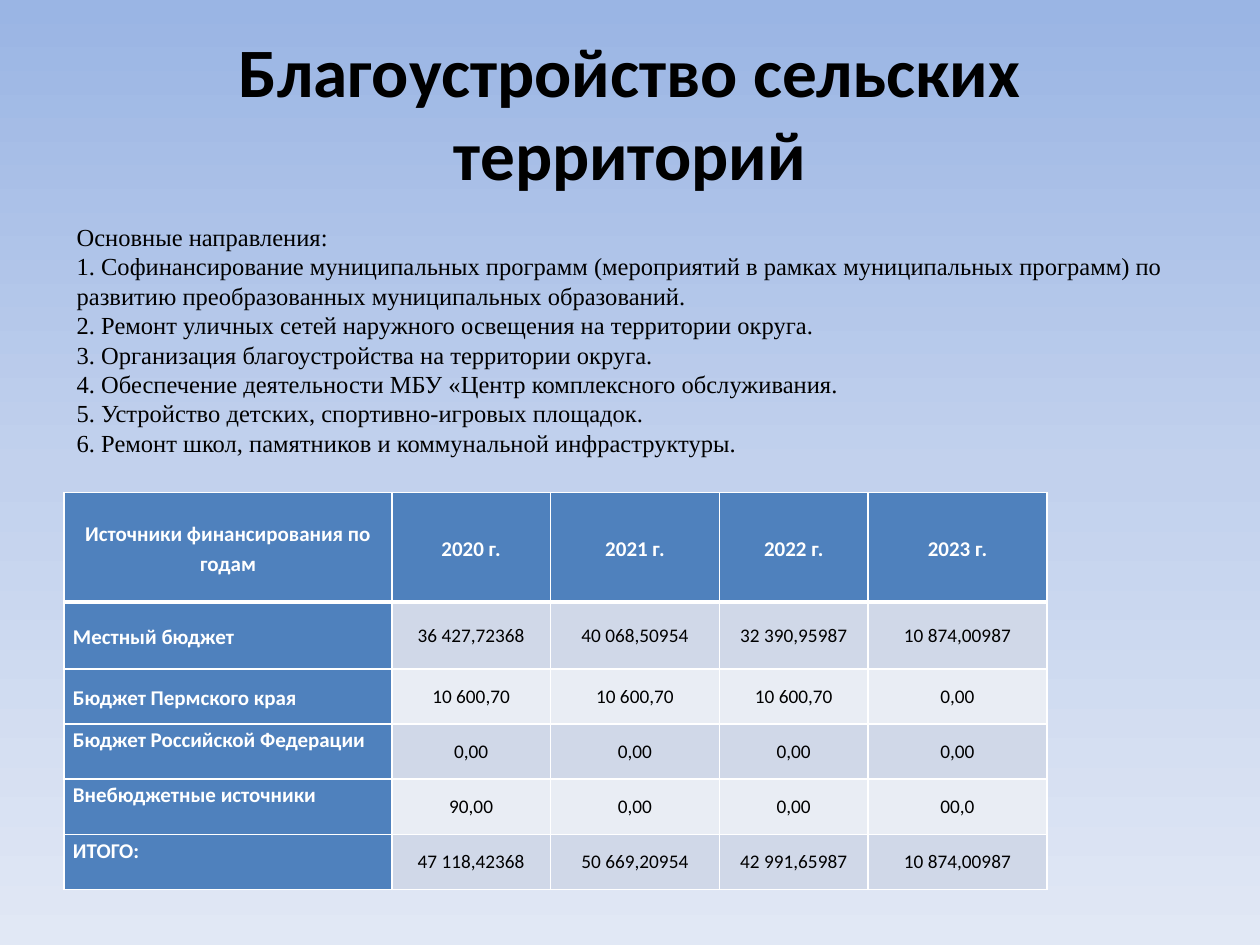
from copy import deepcopy
from dataclasses import dataclass

from lxml import etree
from pptx import Presentation
from pptx.dml.color import RGBColor
from pptx.enum import text as t
from pptx.oxml import ns
from pptx.util import Pt


@dataclass(frozen=True)
class Theme:
    sky: tuple = ("9AB5E4", "C2D1ED", "E1E8F5")
    ink: str = "000000"
    white: str = "FFFFFF"
    accent: str = "4F81BD"
    bands: tuple = ("D0D8E8", "E9EDF4")
    sans: str = "Calibri"
    serif: str = "Times New Roman"
    title_size: float = 39.6
    body_size: float = 14
    label_size: float = 12
    value_size: float = 11


THEME = Theme()

TITLE = "Благоустройство сельских территорий"
DIRECTIONS = """Основные направления:
1. Софинансирование муниципальных программ (мероприятий в рамках муниципальных программ) по развитию преобразованных муниципальных образований.
2. Ремонт уличных сетей наружного освещения на территории округа.
3. Организация благоустройства на территории округа.
4. Обеспечение деятельности МБУ «Центр комплексного обслуживания.
5. Устройство детских, спортивно-игровых площадок.
6. Ремонт школ, памятников и коммунальной инфраструктуры."""
FUNDING = [
    ["Источники финансирования по годам", "2020 г.", "2021 г.", "2022 г.", "2023 г."],
    ["Местный бюджет", "36 427,72368", "40 068,50954", "32 390,95987", "10 874,00987"],
    ["Бюджет Пермского края", "10 600,70", "10 600,70", "10 600,70", "0,00"],
    ["Бюджет Российской Федерации", "0,00", "0,00", "0,00", "0,00"],
    ["Внебюджетные источники", "90,00", "0,00", "0,00", "00,0"],
    ["ИТОГО:", "47 118,42368", "50 669,20954", "42 991,65987", "10 874,00987"],
]
COLUMN_WIDTHS = (187.2, 90.7, 96.5, 85, 102.2)
ROW_HEIGHTS = (62.6, 38.2, 31.5, 31.5, 31.5, 31.5)


def write(frame, content, *, font, size, color=THEME.ink, bold=False,
          align=t.PP_ALIGN.LEFT, spacing=None):
    frame.word_wrap = True
    for index, line in enumerate(content.split("\n")):
        paragraph = frame.add_paragraph() if index else frame.paragraphs[0]
        paragraph.alignment = align
        if spacing:
            paragraph.line_spacing = spacing
        run = paragraph.add_run()
        run.text = line
        run.font.name = font
        run.font.size = Pt(size)
        run.font.bold = bold
        run.font.color.rgb = RGBColor.from_string(color)


def paint_background(slide):
    fill = slide.background.fill
    fill.gradient()
    fill.gradient_angle = 270
    stops = slide.element.find(".//" + ns.qn("a:gsLst"))
    stops.append(deepcopy(stops[-1]))
    for index, (stop, color) in enumerate(zip(fill.gradient_stops, THEME.sky)):
        stop.position = index / 2
        stop.color.rgb = RGBColor.from_string(color)


def add_text(slide, box, content, **style):
    frame = slide.shapes.add_textbox(*map(Pt, box)).text_frame
    frame.vertical_anchor = t.MSO_ANCHOR.MIDDLE
    write(frame, content, **style)


def add_borders(cell, **widths):
    properties = cell._tc.get_or_add_tcPr()
    for index, side in enumerate("LRTB"):
        line = etree.Element(ns.qn("a:ln" + side), w=str(Pt(widths.get(side, 1))))
        solid = etree.SubElement(line, ns.qn("a:solidFill"))
        etree.SubElement(solid, ns.qn("a:srgbClr"), val=THEME.white)
        properties.insert(index, line)


def fill_cell(cell, row, column, content):
    header, label = row == 0, column == 0
    cell.margin_left = cell.margin_right = Pt(5)
    cell.margin_top = cell.margin_bottom = 0
    top_label = label and row > 2
    cell.vertical_anchor = t.MSO_ANCHOR.TOP if top_label else t.MSO_ANCHOR.MIDDLE
    cell.fill.solid()
    background = THEME.accent if header or label else THEME.bands[(row - 1) % 2]
    cell.fill.fore_color.rgb = RGBColor.from_string(background)
    align = t.PP_ALIGN.LEFT if label and not header else t.PP_ALIGN.CENTER
    if header or label:
        write(cell.text_frame, content, font=THEME.sans, size=THEME.label_size,
              color=THEME.white, bold=True, align=align, spacing=1.15)
    else:
        write(cell.text_frame, content, font=THEME.sans, size=THEME.value_size,
              align=align)
    add_borders(cell, T=3 if row == 1 else 1, B=3 if header else 1)


def add_funding_table(slide, left, top):
    table = slide.shapes.add_table(
        len(FUNDING), len(COLUMN_WIDTHS), Pt(left), Pt(top),
        Pt(sum(COLUMN_WIDTHS)), Pt(sum(ROW_HEIGHTS))).table
    for column, width in zip(table.columns, COLUMN_WIDTHS):
        column.width = Pt(width)
    for row, height in zip(table.rows, ROW_HEIGHTS):
        row.height = Pt(height)
    for row, values in enumerate(FUNDING):
        for column, value in enumerate(values):
            fill_cell(table.cell(row, column), row, column, value)


def main():
    deck = Presentation()
    deck.slide_width, deck.slide_height = Pt(720), Pt(540)
    slide = deck.slides.add_slide(deck.slide_layouts[6])
    paint_background(slide)
    add_text(slide, (36, 21.6, 648, 84.2), TITLE, font=THEME.sans,
             size=THEME.title_size, bold=True, align=t.PP_ALIGN.CENTER)
    add_text(slide, (36.7, 122.4, 661, 143.3), DIRECTIONS, font=THEME.serif,
             size=THEME.body_size)
    add_funding_table(slide, 36.7, 281.5)
    deck.save("out.pptx")


if __name__ == "__main__":
    main()
